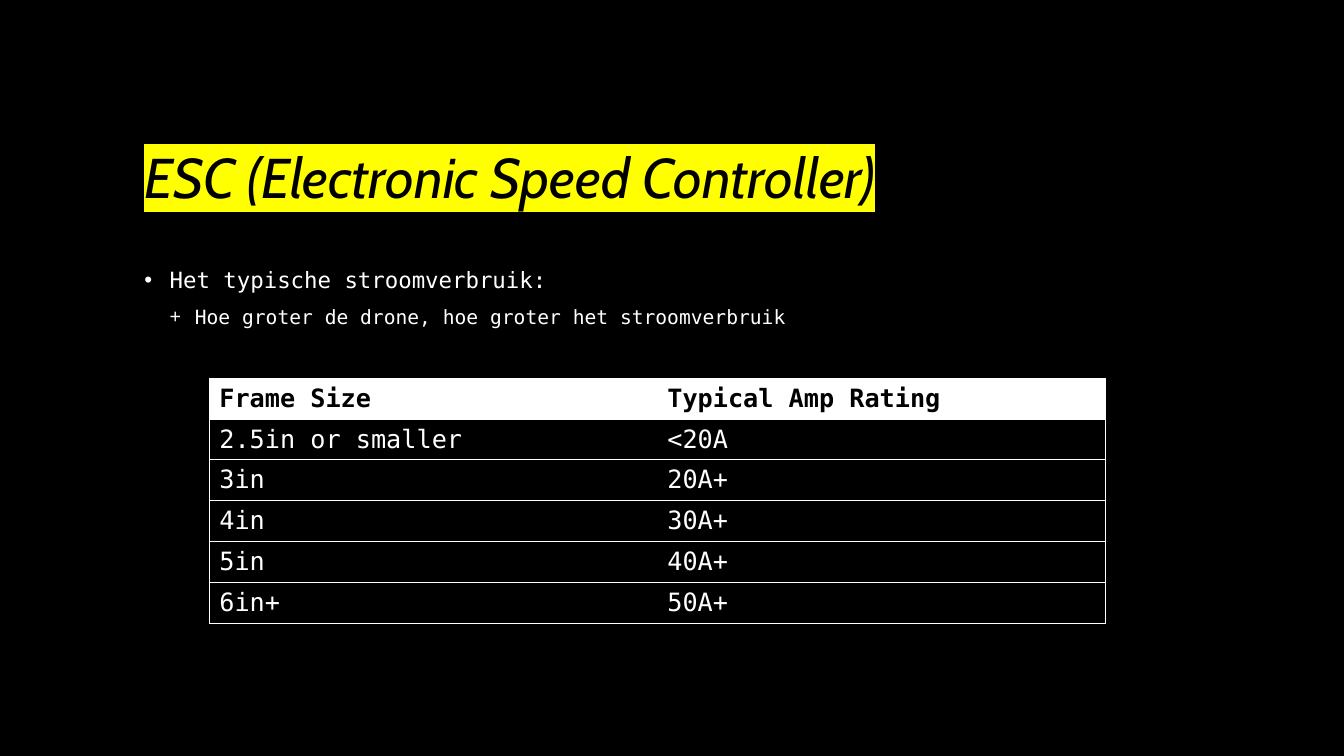
from lxml.etree import SubElement
from pptx import Presentation
from pptx.dml.color import RGBColor
from pptx.enum.text import MSO_ANCHOR, MSO_AUTO_SIZE, PP_ALIGN
from pptx.oxml.ns import qn
from pptx.util import Pt

TITLE = "ESC (Electronic Speed Controller)"
# text, level, bullet, size, space before
POINTS = [
    ("Het typische stroomverbruik:", 0, "•", 16, 10),
    ("Hoe groter de drone, hoe groter het stroomverbruik", 1, "+", 14, 5),
]
ROWS = [
    ("Frame Size", "Typical Amp Rating"),
    ("2.5in or smaller", "<20A"),
    ("3in", "20A+"),
    ("4in", "30A+"),
    ("5in", "40A+"),
    ("6in+", "50A+"),
]
COLORS = {"back": "000000", "line": "FFFFFF", "mark": "FFFF00"}
HEAD, MONO = "Cabin", "DejaVu Sans Mono"
LEFT, WIDTH = 96, 747.36
ROW_H, COL_W = 29.2, 320
INDENT = 18


def color(name):
    return RGBColor.from_string(COLORS[name])


def style(para, face, size, tone, bold=False, italic=False):
    for run in para.runs:
        font = run.font
        font.name, font.size = face, Pt(size)
        font.bold, font.italic = bold, italic
        font.color.rgb = color(tone)


def place(shape, top, height, anchor):
    shape.left, shape.top = Pt(LEFT), Pt(top)
    shape.width, shape.height = Pt(WIDTH), Pt(height)
    frame = shape.text_frame
    frame.auto_size = MSO_AUTO_SIZE.NONE
    frame.vertical_anchor = anchor
    return frame


def mark(run):
    """Highlight a run whose colour is already set."""
    props = run.font._element
    light = SubElement(props, qn("a:highlight"))
    SubElement(light, qn("a:srgbClr"), val=COLORS["mark"])
    props.find(qn("a:solidFill")).addnext(light)


def border(cell, sides):
    """Draw the named sides and clear the others."""
    props = cell._tc.get_or_add_tcPr()
    for side in "LRTB":
        line = SubElement(props, qn("a:ln" + side), w=str(Pt(0.5)))
        if side in sides:
            fill = SubElement(line, qn("a:solidFill"))
            SubElement(fill, qn("a:srgbClr"), val=COLORS["line"])
        else:
            SubElement(line, qn("a:noFill"))


def add_title(slide):
    frame = place(slide.shapes.title, 28.8, 124.56, MSO_ANCHOR.BOTTOM)
    frame.text = TITLE
    para = frame.paragraphs[0]
    para.alignment, para.line_spacing = PP_ALIGN.LEFT, 1.2
    style(para, HEAD, 40, "back", italic=True)
    mark(para.runs[0])


def add_points(slide):
    frame = place(slide.placeholders[1], 182.88, 315.36, MSO_ANCHOR.TOP)
    frame.text = "\n".join(point[0] for point in POINTS)
    for para, (_, level, sign, size, gap) in zip(frame.paragraphs, POINTS):
        para.level, para.line_spacing = level, 1.2
        para.space_before = Pt(gap)
        style(para, MONO, size, "line")
        props = para._p.get_or_add_pPr()
        props.set("marL", str(Pt(INDENT * (level + 1))))
        props.set("indent", str(Pt(-INDENT)))
        SubElement(props, qn("a:buChar"), char=sign)


def add_grid(slide):
    count = len(ROWS)
    table = slide.shapes.add_table(
        count, 2, Pt(149.5), Pt(270), Pt(2 * COL_W), Pt(count * ROW_H)
    ).table
    table.first_row = table.horz_banding = False
    for col in table.columns:
        col.width = Pt(COL_W)
    for r, texts in enumerate(ROWS):
        table.rows[r].height = Pt(ROW_H)
        for c, text in enumerate(texts):
            cell = table.cell(r, c)
            cell.text = text
            cell.vertical_anchor = MSO_ANCHOR.MIDDLE
            border(cell, "TB" + "LR"[c])
            cell.fill.solid()
            cell.fill.fore_color.rgb = color("back" if r else "line")
            tone = "line" if r else "back"
            style(cell.text_frame.paragraphs[0], MONO, 18, tone, bold=r == 0)


def main():
    deck = Presentation()
    deck.slide_width, deck.slide_height = Pt(960), Pt(540)
    slide = deck.slides.add_slide(deck.slide_layouts[1])
    slide.background.fill.solid()
    slide.background.fill.fore_color.rgb = color("back")
    add_title(slide)
    add_points(slide)
    add_grid(slide)
    deck.save("out.pptx")


if __name__ == "__main__":
    main()
